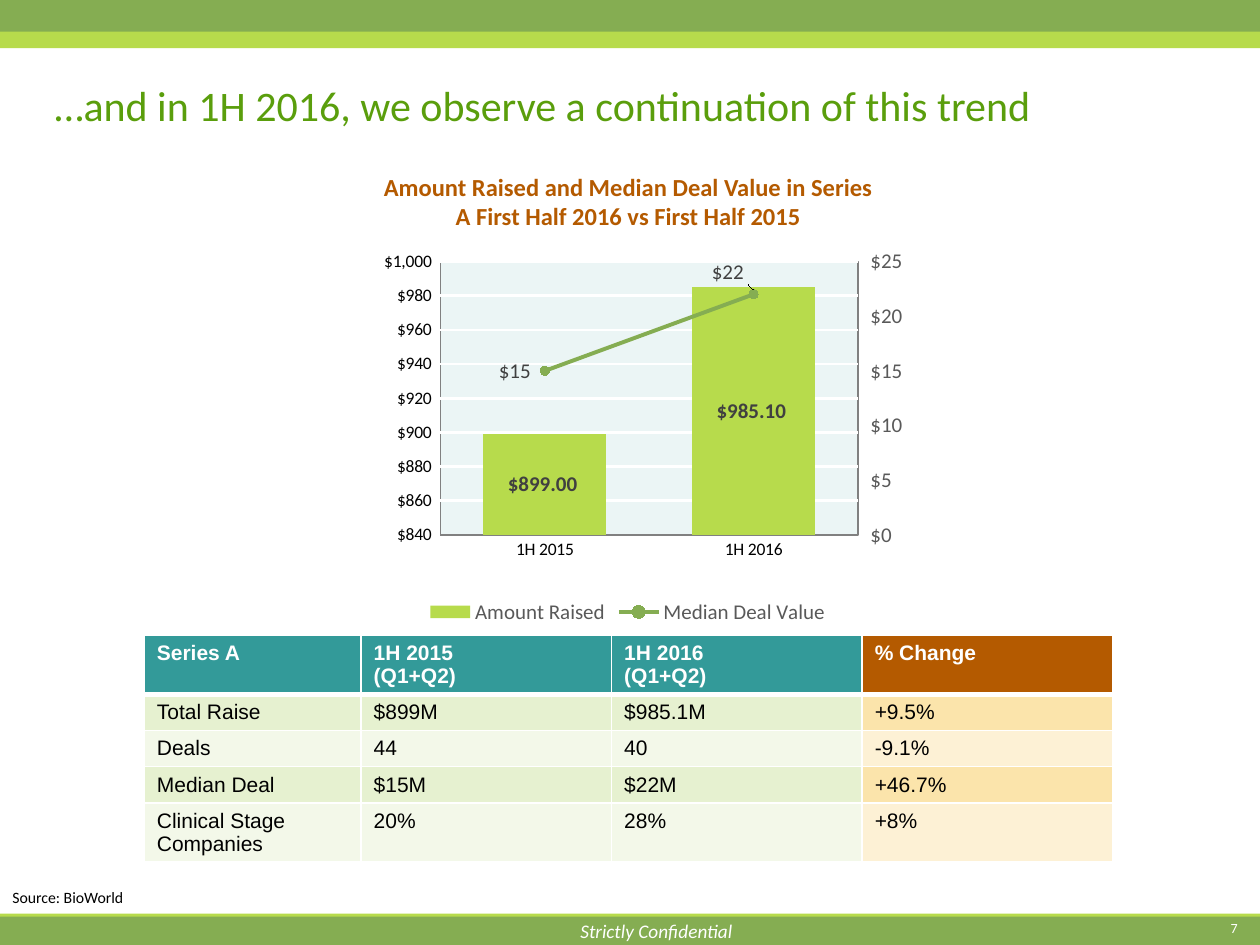
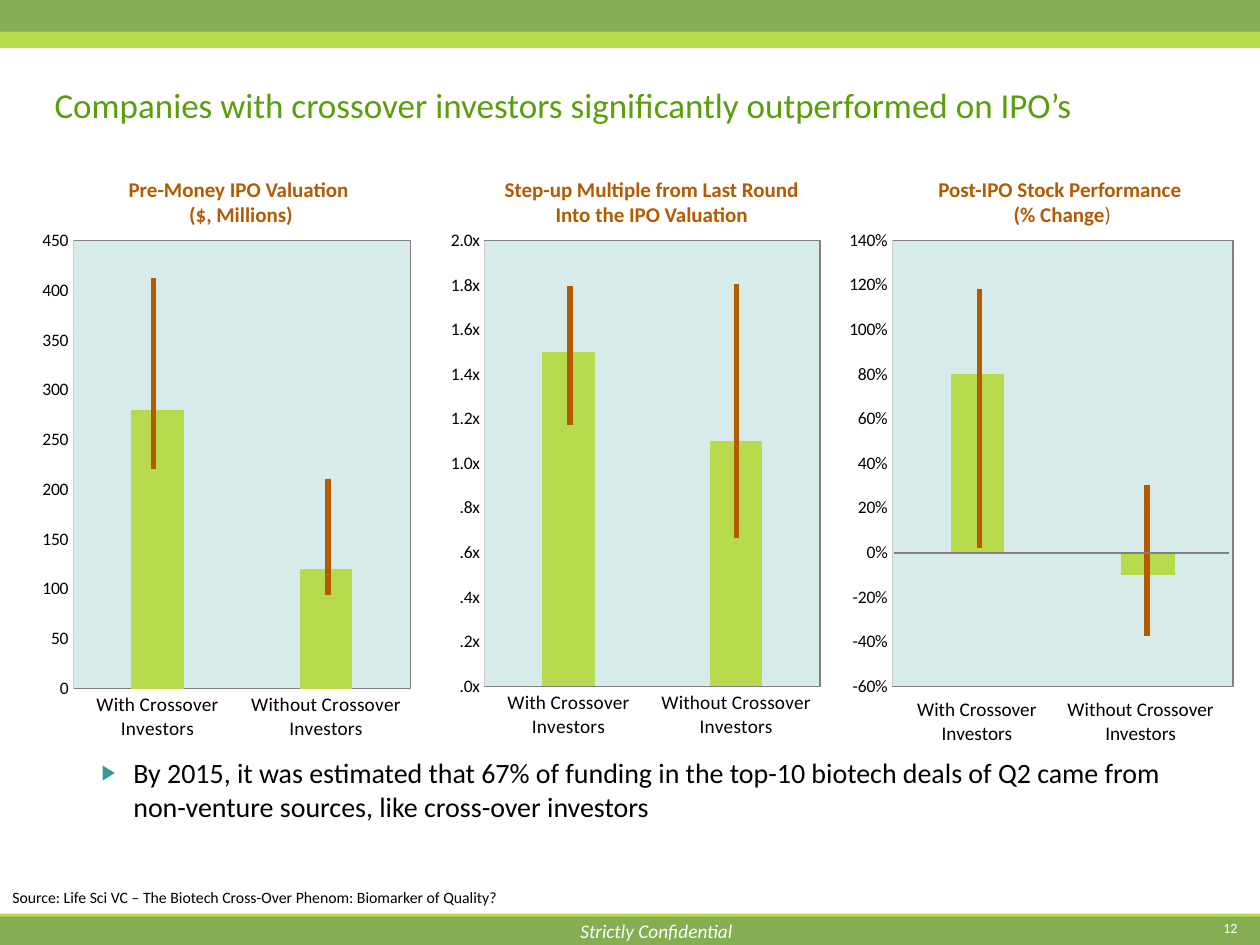
from dataclasses import dataclass

from pptx import Presentation
from pptx import util as u
from pptx.chart import axis as chart_axis
from pptx.chart import data as chart_data
from pptx.dml import color
from pptx.enum import chart as ch, shapes, text
from pptx.oxml import parse_xml
from pptx.oxml import ns


@dataclass(frozen=True)
class Theme:
    font: str = "Calibri"
    table_font: str = "Arial"
    green: str = "85AD52"
    lime: str = "B7DB4C"
    title: str = "5A9E0C"
    teal: str = "339A99"
    orange: str = "B45A00"
    black: str = "000000"
    white: str = "FFFFFF"
    grey: str = "808080"
    dark_grey: str = "404040"
    mid_grey: str = "595959"
    light_grey: str = "CCCCCC"
    pale_plot: str = "EBF5F5"
    plot: str = "D7EBEB"
    green_rows: tuple = ("E6F1D0", "F3F8E9")
    orange_rows: tuple = ("FBE4AB", "FDF1D5")
    page_size: int = 8
    source_size: int = 9
    axis_size: int = 10
    label_size: int = 11
    small_size: int = 12
    heading_size: int = 14
    body_size: int = 16


THEME = Theme()

# Content; every box is left, top, width, height in centimetres
SLIDE_SIZE = (25.4, 19.05)
BANDS = [
    ((0, 0.33, 25.4, 0.64), THEME.lime),
    ((0, 0, 25.4, 0.64), THEME.green),
    ((0, 18.42, 25.4, 0.63), THEME.lime),
    ((0, 18.48, 25.4, 0.57), THEME.green),
]
FOOTER = "Strictly Confidential"

TREND = {
    "title": "…and in 1H 2016, we observe a continuation of this trend",
    "title_size": 24,
    "page": "7",
    "source": "Source: BioWorld",
}
TREND_HEADING = "Amount Raised and Median Deal Value in Series A First Half 2016 vs First Half 2015"
DOLLARS = '"$"#,##0_);[Red]\\("$"#,##0\\)'
DOLLARS_CENTS = '"$"#,##0.00_);[Red]\\("$"#,##0.00\\)'
PERIODS = ["1H 2015", "1H 2016"]
AMOUNT_RAISED = ("Amount Raised", (899, 985.1), DOLLARS_CENTS)
MEDIAN_DEAL = ("Median Deal Value", (15, 22), DOLLARS)
SERIES_A = [
    ("Series A", "1H 2015\n(Q1+Q2)", "1H 2016\n(Q1+Q2)", "% Change"),
    ("Total Raise", "$899M", "$985.1M", "+9.5%"),
    ("Deals", "44", "40", "-9.1%"),
    ("Median Deal", "$15M", "$22M", "+46.7%"),
    ("Clinical Stage\nCompanies", "20%", "28%", "+8%"),
]
COLUMN_WIDTHS = (4.37, 5.05, 5.05, 5.05)
ROW_HEIGHTS = (1.18, 0.73, 0.73, 0.73, 1.18)

CROSSOVER = {
    "title": "Companies with crossover investors significantly outperformed on IPO’s",
    "title_size": 20,
    "page": "12",
    "source": "Source: Life Sci VC – The Biotech Cross-Over Phenom: Biomarker of Quality?",
}
INVESTORS = ["With Crossover Investors", "Without Crossover Investors"]
# Ranges are x, top, bottom of the spread line over each bar
COMPARISONS = [
    {"heading": "Pre-Money IPO Valuation \v($, Millions)", "heading_box": (1.47, 3.43, 6.78, 1.27),
     "box": (0.48, 4.4, 8.61, 10.95), "plot": (0.116, 0.041, 0.789, 0.825),
     "values": (280, 120), "scale": (0, 450, 50), "format": "0",
     "ranges": [(3.1, 5.61, 9.45), (6.61, 9.65, 11.99)]},
    {"heading": "Step-up Multiple from Last Round Into the IPO Valuation",
     "heading_box": (9.8, 3.43, 6.68, 1.27),
     "box": (8.42, 4.53, 8.46, 10.77), "plot": (0.16, 0.03, 0.799, 0.834),
     "values": (1.5, 1.1), "scale": (0, 2, 0.2), "format": "##.0\\x",
     "ranges": [(11.49, 5.77, 8.57), (14.84, 5.72, 10.85)]},
    {"heading": "Post-IPO Stock Performance \v(% Change", "heading_tail": ")",
     "heading_box": (18.01, 3.43, 6.81, 1.27),
     "box": (16.53, 4.63, 8.64, 11.38), "plot": (0.169, 0.019, 0.795, 0.79),
     "values": (0.8, -0.1), "scale": (-0.6, 1.4, 0.2), "format": "0%",
     "ranges": [(19.75, 5.82, 11.05), (23.12, 9.78, 12.83)]},
]
LABEL_BOXES = [(18.21, 13.94, 2.97, 1.19), (21.18, 13.94, 3.63, 1.19)]
ZERO_LINE = (18.02, 11.15, 24.77, 11.15)
FUNDING_NOTE = ("By 2015, it was estimated that 67% of funding in the top-10 biotech deals of Q2 "
                "came from non-venture sources, like cross-over investors")


# Shared helpers
def cm(lengths):
    return [u.Cm(length) for length in lengths]


def rgb(value):
    return color.RGBColor.from_string(value)


def style_font(font, size, colour, bold=False, italic=False, name=THEME.font):
    font.name, font.size, font.bold, font.italic = name, u.Pt(size), bold, italic
    font.color.rgb = rgb(colour)


def style_line(line, colour, width=0.75):
    line.color.rgb, line.width = rgb(colour), u.Pt(width)


def fill_solid(fill, colour):
    fill.solid()
    fill.fore_color.rgb = rgb(colour)


def add_text(slide, box, words, size, colour, align=text.PP_ALIGN.LEFT,
             anchor=text.MSO_ANCHOR.TOP, wrap=True, **style):
    frame = slide.shapes.add_textbox(*cm(box)).text_frame
    frame.word_wrap, frame.vertical_anchor = wrap, anchor
    paragraph = frame.paragraphs[0]
    paragraph.text = words
    paragraph.alignment = align
    for run in paragraph.runs:
        style_font(run.font, size, colour, **style)
    return paragraph


def add_line(slide, ends, colour, width):
    connector = slide.shapes.add_connector(shapes.MSO_CONNECTOR.STRAIGHT, *cm(ends))
    style_line(connector.line, colour, width)
    connector.element.spPr.append(parse_xml(f"<a:effectLst {ns.nsdecls('a')}/>"))


def add_base_slide(presentation, content):
    slide = presentation.slides.add_slide(presentation.slide_layouts[6])
    for box, colour in BANDS:
        band = slide.shapes.add_shape(shapes.MSO_SHAPE.RECTANGLE, *cm(box))
        band.shadow.inherit = False
        fill_solid(band.fill, colour)
        band.line.fill.background()
    add_text(slide, (11.43, 18.4, 3.61, 0.74), FOOTER, THEME.label_size, THEME.white,
             text.PP_ALIGN.CENTER, wrap=False, italic=True)
    add_text(slide, (23.29, 18.42, 1.91, 0.84), content["page"], THEME.page_size, THEME.white,
             text.PP_ALIGN.RIGHT)
    add_text(slide, (0.85, 1.06, 22.86, 2.11), content["title"], content["title_size"],
             THEME.title, anchor=text.MSO_ANCHOR.MIDDLE)
    add_text(slide, (0, 16.71, 23.5, 1.7), content["source"], THEME.source_size, THEME.black,
             anchor=text.MSO_ANCHOR.BOTTOM)
    return slide


# Charts
def style_value_axis(axis, scale, number_format, size=THEME.axis_size, colour=THEME.black):
    axis.minimum_scale, axis.maximum_scale, axis.major_unit = scale
    axis.has_major_gridlines = False
    axis.major_tick_mark = ch.XL_TICK_MARK.NONE
    axis.tick_labels.number_format = number_format
    axis.tick_labels.number_format_is_linked = False
    style_font(axis.tick_labels.font, size, colour)


def add_column_chart(slide, kind, box, plot_box, plot_fill, categories, series_list,
                     gap, overlap, scale, axis_format, category_size):
    data = chart_data.CategoryChartData()
    data.categories = categories
    for series in series_list:
        data.add_series(*series)
    chart = slide.shapes.add_chart(kind, *cm(box), data).chart
    chart.has_title = chart.has_legend = False
    style_font(chart.font, THEME.axis_size, THEME.black)

    plot = chart.plots[0]
    plot.gap_width, plot.overlap, plot.vary_by_categories = gap, overlap, False
    fill_solid(plot.series[0].format.fill, THEME.lime)
    plot.series[0].invert_if_negative = False
    style_value_axis(chart.value_axis, scale, axis_format)
    chart.category_axis.major_tick_mark = ch.XL_TICK_MARK.NONE
    style_font(chart.category_axis.tick_labels.font, category_size, THEME.black)

    # Inner plot position, fill and border
    area = chart.element.find(".//" + ns.qn("c:plotArea"))
    for layout in area.findall(ns.qn("c:layout")):
        area.remove(layout)
    places = "".join(f'<c:{key} val="{value}"/>' for key, value in zip("xywh", plot_box))
    area.insert(0, parse_xml(
        f'<c:layout {ns.nsdecls("c")}><c:manualLayout><c:layoutTarget val="inner"/>'
        f'<c:xMode val="edge"/><c:yMode val="edge"/>{places}</c:manualLayout></c:layout>'))
    area.append(parse_xml(
        f'<c:spPr {ns.nsdecls("c", "a")}><a:solidFill><a:srgbClr val="{plot_fill}"/></a:solidFill>'
        f'<a:ln w="9525"><a:solidFill><a:srgbClr val="{THEME.grey}"/></a:solidFill></a:ln></c:spPr>'))
    return chart


def move_to_right_axis(chart):
    """Turn the second column series into a line on a second value axis."""
    bars = chart.element.find(".//" + ns.qn("c:barChart"))
    series = bars.findall(ns.qn("c:ser"))[1]
    for inverted in series.findall(ns.qn("c:invertIfNegative")):
        series.remove(inverted)
    line_chart = parse_xml(
        f'<c:lineChart {ns.nsdecls("c")}><c:grouping val="standard"/><c:varyColors val="0"/>'
        '<c:marker val="1"/><c:axId val="5001"/><c:axId val="5002"/></c:lineChart>')
    line_chart.insert(2, series)
    bars.addnext(line_chart)

    def make_axis(tag, number, other, deleted, side, ending):
        return parse_xml(
            f'<c:{tag} {ns.nsdecls("c")}><c:axId val="{number}"/><c:scaling>'
            f'<c:orientation val="minMax"/></c:scaling><c:delete val="{deleted}"/>'
            f'<c:axPos val="{side}"/><c:tickLblPos val="nextTo"/>'
            f'<c:crossAx val="{other}"/>{ending}</c:{tag}>')

    hidden = make_axis("catAx", 5001, 5002, 1, "b", '<c:crosses val="autoZero"/>')
    right = make_axis("valAx", 5002, 5001, 0, "r",
                      '<c:crosses val="max"/><c:crossBetween val="between"/>')
    chart.value_axis._element.addnext(right)
    right.addnext(hidden)
    return chart_axis.ValueAxis(right)


def style_labels(labels, position, number_format, bold=False):
    labels.show_value, labels.position = True, position
    labels.number_format, labels.number_format_is_linked = number_format, False
    style_font(labels.font, THEME.small_size, THEME.dark_grey, bold)


def add_trend_chart(slide):
    chart = add_column_chart(
        slide, ch.XL_CHART_TYPE.COLUMN_STACKED, (6.7, 4.79, 11.91, 7.9),
        (0.183, 0.061, 0.707, 0.698), THEME.pale_plot, PERIODS, [AMOUNT_RAISED, MEDIAN_DEAL],
        70, 100, (840, 1000, 20), DOLLARS, THEME.axis_size)
    chart.value_axis.has_major_gridlines = True
    style_line(chart.value_axis.major_gridlines.format.line, THEME.white, 1.5)
    chart.value_axis.format.line.fill.background()
    style_line(chart.category_axis.format.line, THEME.grey)
    right = move_to_right_axis(chart)
    style_value_axis(right, (0, 25, 5), DOLLARS, THEME.small_size, THEME.mid_grey)
    right.major_tick_mark = ch.XL_TICK_MARK.OUTSIDE
    right.format.line.fill.background()

    amount, median = chart.plots[0].series[0], chart.plots[1].series[0]
    style_labels(amount.data_labels, ch.XL_LABEL_POSITION.CENTER, AMOUNT_RAISED[2], True)
    style_line(median.format.line, THEME.green, 2.25)
    median.smooth = False
    median.marker.style, median.marker.size = ch.XL_MARKER_STYLE.CIRCLE, 5
    fill_solid(median.marker.format.fill, THEME.green)
    style_line(median.marker.format.line, THEME.green)
    style_labels(median.data_labels, ch.XL_LABEL_POSITION.LEFT, MEDIAN_DEAL[2])
    last_label = median.points[1].data_label
    style_font(last_label.font, THEME.small_size, THEME.dark_grey)
    last_label.position = ch.XL_LABEL_POSITION.ABOVE
    # Nudge the last label left of its marker
    label_index = median._element.find(".//" + ns.qn("c:dLbl") + "/" + ns.qn("c:idx"))
    label_index.addnext(parse_xml(
        f'<c:layout {ns.nsdecls("c")}><c:manualLayout><c:x val="-0.04"/><c:y val="0"/>'
        '</c:manualLayout></c:layout>'))

    chart.has_legend = True
    chart.legend.position = ch.XL_LEGEND_POSITION.BOTTOM
    chart.legend.include_in_layout = False
    style_font(chart.legend.font, THEME.small_size, THEME.mid_grey)


# Table
def add_series_table(slide):
    box = (2.91, 12.8, sum(COLUMN_WIDTHS), sum(ROW_HEIGHTS))
    table = slide.shapes.add_table(len(SERIES_A), len(COLUMN_WIDTHS), *cm(box)).table
    for column, width in zip(table.columns, COLUMN_WIDTHS):
        column.width = u.Cm(width)
    for row, height in zip(table.rows, ROW_HEIGHTS):
        row.height = u.Cm(height)
    for r, values in enumerate(SERIES_A):
        header = r == 0
        for c, value in enumerate(values):
            cell, is_change = table.cell(r, c), c == len(values) - 1
            cell.margin_bottom = u.Cm(0.05)
            for side in "LRTB":
                thick = (side == "B" and header) or (side == "T" and r == 1)
                cell._tc.get_or_add_tcPr().append(parse_xml(
                    f'<a:ln{side} {ns.nsdecls("a")} w="{u.Pt(3 if thick else 1)}"><a:solidFill>'
                    f'<a:srgbClr val="{THEME.white}"/></a:solidFill></a:ln{side}>'))
            if header:
                fill = THEME.orange if is_change else THEME.teal
            else:
                fill = (THEME.orange_rows if is_change else THEME.green_rows)[(r - 1) % 2]
            fill_solid(cell.fill, fill)
            cell.text_frame.text = value
            for paragraph in cell.text_frame.paragraphs:
                style_font(paragraph.runs[0].font, THEME.small_size,
                           THEME.white if header else THEME.black, header, name=THEME.table_font)


# Slides
def build_trend_slide(presentation):
    slide = add_base_slide(presentation, TREND)
    add_series_table(slide)
    add_trend_chart(slide)
    add_text(slide, (7.38, 3.34, 10.57, 1.45), TREND_HEADING, THEME.heading_size, THEME.orange,
             text.PP_ALIGN.CENTER, bold=True)


def build_crossover_slide(presentation):
    slide = add_base_slide(presentation, CROSSOVER)
    for item in COMPARISONS:
        chart = add_column_chart(
            slide, ch.XL_CHART_TYPE.COLUMN_CLUSTERED, item["box"], item["plot"], THEME.plot,
            INVESTORS, [("Series 1", item["values"])], 219, -27, item["scale"], item["format"],
            THEME.label_size)
        style_line(chart.value_axis.format.line, THEME.light_grey)
        chart.category_axis.format.line.fill.background()
        chart.category_axis.visible = item["scale"][0] == 0
    for item in COMPARISONS:
        heading = add_text(slide, item["heading_box"], item["heading"], THEME.small_size,
                           THEME.orange, text.PP_ALIGN.CENTER, bold=True)
        if "heading_tail" in item:
            tail = heading.add_run()
            tail.text = item["heading_tail"]
            style_font(tail.font, THEME.small_size, THEME.orange)
        for x, top, bottom in item["ranges"]:
            add_line(slide, (x, top, x, bottom), THEME.orange, 3)
    add_line(slide, ZERO_LINE, THEME.grey, 0.75)
    for box, label in zip(LABEL_BOXES, INVESTORS):
        add_text(slide, box, label, THEME.label_size, THEME.black, text.PP_ALIGN.CENTER)

    # Bulleted note
    note = add_text(slide, (0.85, 15.11, 23.06, 1.78), FUNDING_NOTE, THEME.body_size, THEME.black)
    properties = note._p.get_or_add_pPr()
    properties.set("marL", str(u.Cm(1.59)))
    properties.set("indent", str(u.Cm(-0.64)))
    for bullet in (f'<a:buClr {{}}><a:srgbClr val="{THEME.teal}"/></a:buClr>',
                   '<a:buSzPct {} val="75000"/>', '<a:buFont {} typeface="Arial"/>',
                   '<a:buChar {} char="▶"/>'):
        properties.append(parse_xml(bullet.format(ns.nsdecls("a"))))


def main():
    presentation = Presentation()
    presentation.slide_width, presentation.slide_height = cm(SLIDE_SIZE)
    build_trend_slide(presentation)
    build_crossover_slide(presentation)
    presentation.save("out.pptx")


if __name__ == "__main__":
    main()
